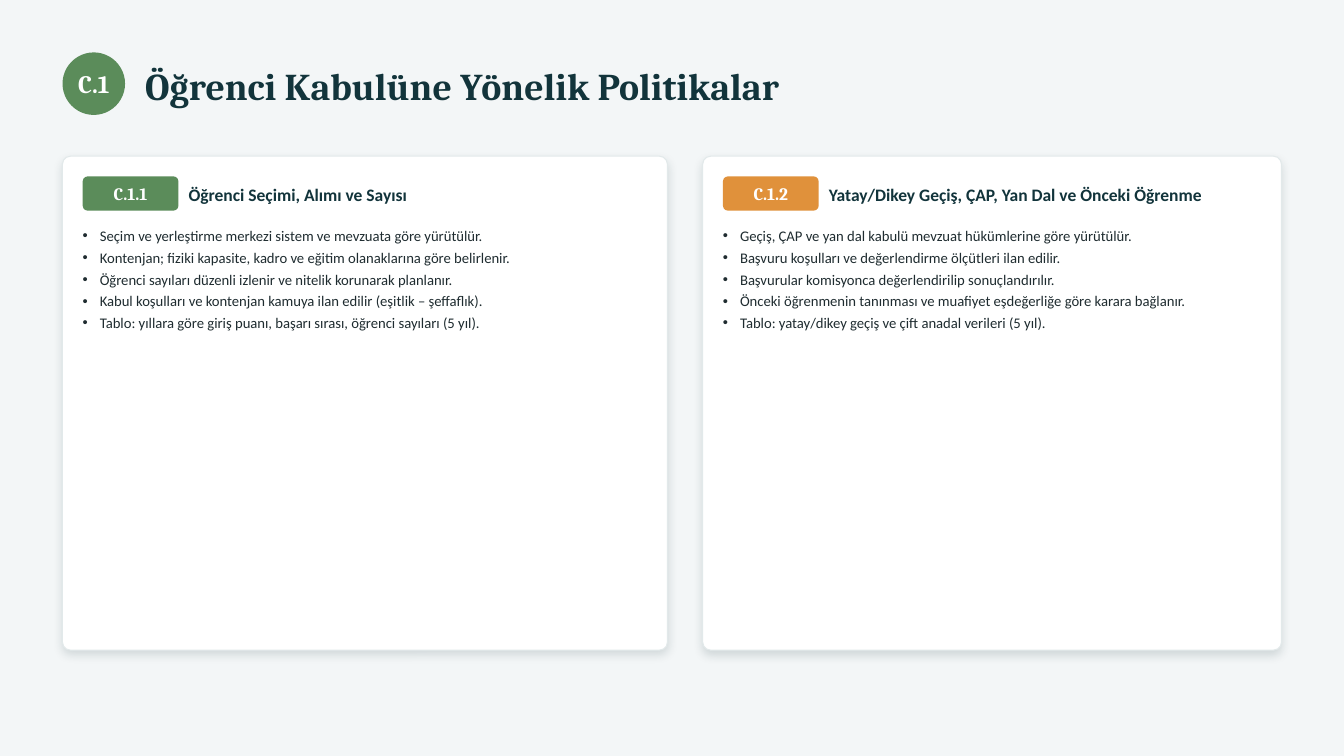
import pptx
import pptx.util
import pptx.dml.color
import pptx.enum.shapes
import pptx.enum.text
import pptx.oxml
import pptx.oxml.ns

PX = 9144
Pt = pptx.util.Pt
RGB = pptx.dml.color.RGBColor.from_string
KIND = pptx.enum.shapes.MSO_SHAPE
ALIGN = pptx.enum.text.PP_ALIGN
ANCHOR = pptx.enum.text.MSO_ANCHOR
NS = pptx.oxml.ns.nsdecls("a")

THEME = {
    "back": "F3F6F7", "card": "FFFFFF", "edge": "E2E9EA", "shade": "0C2A30",
    "green": "5B8C5A", "amber": "E0913B",
    "mark": {"name": "Cambria", "size": Pt(18), "bold": True, "color": "FFFFFF"},
    "title": {"name": "Cambria", "size": Pt(27), "bold": True, "color": "12343B"},
    "badge": {"name": "Cambria", "size": Pt(12.5), "bold": True, "color": "FFFFFF"},
    "head": {"name": "Calibri", "size": Pt(12.5), "bold": True, "color": "12343B"},
    "list": {"name": "Calibri", "size": Pt(10.5), "bold": False, "color": "1F2C30"},
}
FRAME = {"margin_left": 0, "margin_top": 0, "margin_right": 0, "margin_bottom": 0,
         "word_wrap": True, "auto_size": pptx.enum.text.MSO_AUTO_SIZE.NONE}

CARDS = [
    (62, 600, "green", "C.1.1", "Öğrenci Seçimi, Alımı ve Sayısı", [
        "Seçim ve yerleştirme merkezi sistem ve mevzuata göre yürütülür.",
        "Kontenjan; fiziki kapasite, kadro ve eğitim olanaklarına göre belirlenir.",
        "Öğrenci sayıları düzenli izlenir ve nitelik korunarak planlanır.",
        "Kabul koşulları ve kontenjan kamuya ilan edilir (eşitlik – şeffaflık).",
        "Tablo: yıllara göre giriş puanı, başarı sırası, öğrenci sayıları (5 yıl).",
    ]),
    (697, 574, "amber", "C.1.2", "Yatay/Dikey Geçiş, ÇAP, Yan Dal ve Önceki Öğrenme", [
        "Geçiş, ÇAP ve yan dal kabulü mevzuat hükümlerine göre yürütülür.",
        "Başvuru koşulları ve değerlendirme ölçütleri ilan edilir.",
        "Başvurular komisyonca değerlendirilip sonuçlandırılır.",
        "Önceki öğrenmenin tanınması ve muafiyet eşdeğerliğe göre karara bağlanır.",
        "Tablo: yatay/dikey geçiş ve çift anadal verileri (5 yıl).",
    ]),
]


def write(shape, lines, style, align=ALIGN.LEFT, anchor=ANCHOR.MIDDLE):
    frame = shape.text_frame
    for key, value in {**FRAME, "vertical_anchor": anchor}.items():
        setattr(frame, key, value)
    frame.text = "\n".join(lines)
    for para in frame.paragraphs:
        para.alignment = align
        para.space_before = Pt(0)
        font = para.runs[0].font
        for key, value in THEME[style].items():
            if key == "color":
                font.color.rgb = RGB(value)
            else:
                setattr(font, key, value)


def draw(kind, box, fill, curve=None):
    shape = slide.shapes.add_shape(kind, *[n * PX for n in box])
    shape.shadow.inherit = False
    shape.fill.solid()
    shape.fill.fore_color.rgb = RGB(THEME[fill])
    shape.line.fill.background()
    if curve:
        shape.adjustments[0] = curve
    return shape


deck = pptx.Presentation()
deck.slide_width = 1333 * PX
deck.slide_height = 750 * PX
slide = deck.slides.add_slide(deck.slide_layouts[3])
slide.background.fill.solid()
slide.background.fill.fore_color.rgb = RGB(THEME["back"])
title, *lists = slide.placeholders

mark = draw(KIND.OVAL, (62, 52, 62, 62), "green")
write(mark, ["C.1"], "mark", ALIGN.CENTER)
title.left, title.top, title.width, title.height = [n * PX for n in (144, 50, 1127, 70)]
write(title, ["Öğrenci Kabulüne Yönelik Politikalar"], "title")

for body, (left, width, hue, code, name, items) in zip(lists, CARDS):
    card = draw(KIND.ROUNDED_RECTANGLE, (left, 155, width, 490), "card", 0.016)
    card.line.color.rgb = RGB(THEME["edge"])
    card.line.width = Pt(0.75)
    glow = card.element.spPr.find(pptx.oxml.ns.qn("a:effectLst"))
    glow.append(pptx.oxml.parse_xml(
        f'<a:outerShdw {NS} blurRad="{Pt(7)}" dist="{Pt(3)}" dir="5400000" rotWithShape="0">'
        f'<a:srgbClr val="{THEME["shade"]}"><a:alpha val="14000"/></a:srgbClr></a:outerShdw>'))

    inner = left + 20
    badge = draw(KIND.ROUNDED_RECTANGLE, (inner, 175, 95, 34), hue, 0.147)
    write(badge, [code], "badge", ALIGN.CENTER)
    head = slide.shapes.add_textbox(*[n * PX for n in (inner + 105, 173, width - 145, 40)])
    write(head, [name], "head")

    body.left, body.top, body.width, body.height = [
        n * PX for n in (inner, 225, width - 40, 400)]
    write(body, items, "list", anchor=ANCHOR.TOP)
    for para in body.text_frame.paragraphs:
        para.space_after = Pt(3)
        props = para._p.get_or_add_pPr()
        props.set("marL", str(17 * PX))
        props.set("indent", str(-17 * PX))
        props.append(pptx.oxml.parse_xml(f'<a:buChar {NS} char="•"/>'))
    card.element.getparent().append(body.element)

deck.save("out.pptx")
